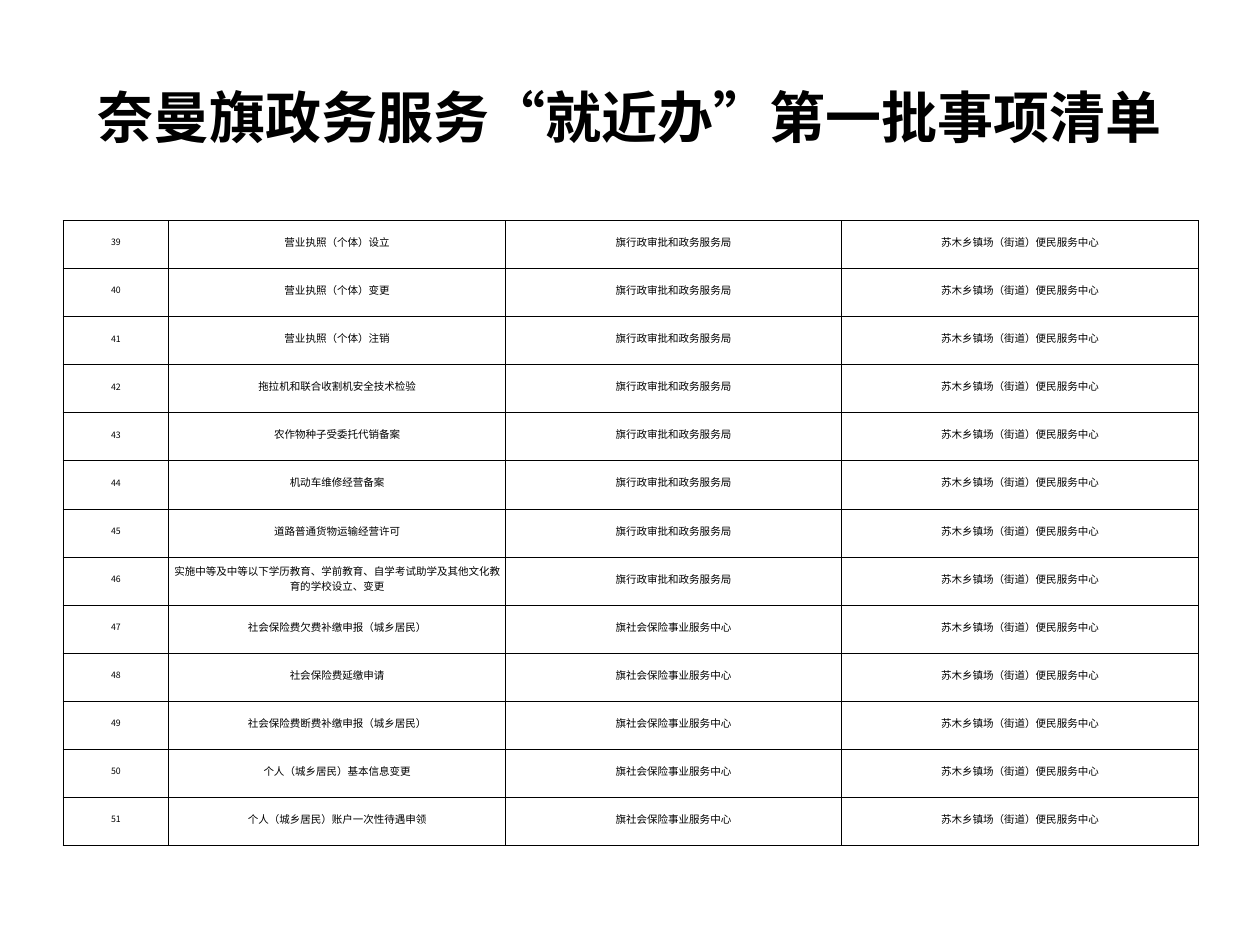
from lxml import etree
from pptx import Presentation
from pptx.dml.color import RGBColor
from pptx.enum.text import MSO_ANCHOR, PP_ALIGN
from pptx.oxml.ns import qn
from pptx.util import Inches, Pt

MIDDLE, CENTER = MSO_ANCHOR.MIDDLE, PP_ALIGN.CENTER
BLACK = RGBColor(0x00, 0x00, 0x00)
WHITE = RGBColor(0xFF, 0xFF, 0xFF)
LATIN_FONT, CJK_FONT = "Arial", "Noto Sans CJK SC"

TITLE = "奈曼旗政务服务“就近办”第一批事项清单"
FIRST_NUMBER = 39
PLACE = "苏木乡镇场（街道）便民服务中心"
ITEMS_BY_OFFICE = {
    "旗行政审批和政务服务局": [
        "营业执照（个体）设立",
        "营业执照（个体）变更",
        "营业执照（个体）注销",
        "拖拉机和联合收割机安全技术检验",
        "农作物种子受委托代销备案",
        "机动车维修经营备案",
        "道路普通货物运输经营许可",
        "实施中等及中等以下学历教育、学前教育、自学考试助学及其他文化教育的学校设立、变更",
    ],
    "旗社会保险事业服务中心": [
        "社会保险费欠费补缴申报（城乡居民）",
        "社会保险费延缴申请",
        "社会保险费断费补缴申报（城乡居民）",
        "个人（城乡居民）基本信息变更",
        "个人（城乡居民）账户一次性待遇申领",
    ],
}
COLUMN_WIDTHS = [0.84, 2.67, 2.67, 2.83]
TABLE_LEFT, TABLE_TOP, TABLE_HEIGHT = 0.5, 1.75, 4.96
CELL_MARGINS = {"margin_left": 0.01, "margin_top": 0.01,
                "margin_right": 0.01, "margin_bottom": 0.05}
TITLE_FORMAT = {"size": Pt(32), "name": LATIN_FONT, "bold": True}
NUMBER_FORMAT = {"size": Pt(5), "name": CJK_FONT, "bold": False}
TEXT_FORMAT = {"size": Pt(6), "name": LATIN_FONT, "bold": False}


def write_text(tf, text, font_format):
    tf.word_wrap = True
    p = tf.paragraphs[0]
    p.alignment = CENTER
    r = p.add_run()
    r.text = text
    for name, value in font_format.items():
        setattr(r.font, name, value)
    r.font.color.rgb = BLACK
    r_pr = r.font._element
    r_pr.set("lang", "zh-CN")
    east_asian = etree.Element(qn("a:ea"), typeface=CJK_FONT)
    r_pr.find(qn("a:latin")).addnext(east_asian)


def add_borders(cell):
    tc_pr = cell._tc.get_or_add_tcPr()
    for position, side in enumerate(("lnL", "lnR", "lnT", "lnB")):
        ln = etree.Element(qn(f"a:{side}"), w=str(Pt(0.5)))
        fill = etree.SubElement(ln, qn("a:solidFill"))
        etree.SubElement(fill, qn("a:srgbClr"), val=str(BLACK))
        tc_pr.insert(position, ln)


def add_title(s):
    tf = s.shapes.add_textbox(Inches(0.5), Inches(0.3), Inches(9), Inches(1.25)).text_frame
    tf.vertical_anchor = MIDDLE
    write_text(tf, TITLE, TITLE_FORMAT)


def add_item_table(s):
    items = [(item, office) for office, names in ITEMS_BY_OFFICE.items() for item in names]
    rows = [(str(number), item, office, PLACE)
            for number, (item, office) in enumerate(items, FIRST_NUMBER)]
    table = s.shapes.add_table(
        len(rows), len(COLUMN_WIDTHS), Inches(TABLE_LEFT), Inches(TABLE_TOP),
        Inches(sum(COLUMN_WIDTHS)), Inches(TABLE_HEIGHT)).table
    table.first_row = table.horz_banding = False
    for column, width in zip(table.columns, COLUMN_WIDTHS):
        column.width = Inches(width)
    for row, values in zip(table.rows, rows):
        row.height = Inches(TABLE_HEIGHT / len(rows))
        for i, (cell, text) in enumerate(zip(row.cells, values)):
            for name, value in CELL_MARGINS.items():
                setattr(cell, name, Inches(value))
            cell.vertical_anchor = MIDDLE
            cell.fill.solid()
            cell.fill.fore_color.rgb = WHITE
            add_borders(cell)
            write_text(cell.text_frame, text, TEXT_FORMAT if i else NUMBER_FORMAT)


def main():
    prs = Presentation()
    prs.slide_width, prs.slide_height = Inches(10), Inches(7.5)
    s = prs.slides.add_slide(prs.slide_layouts[6])
    add_title(s)
    add_item_table(s)
    prs.save("out.pptx")


if __name__ == "__main__":
    main()
